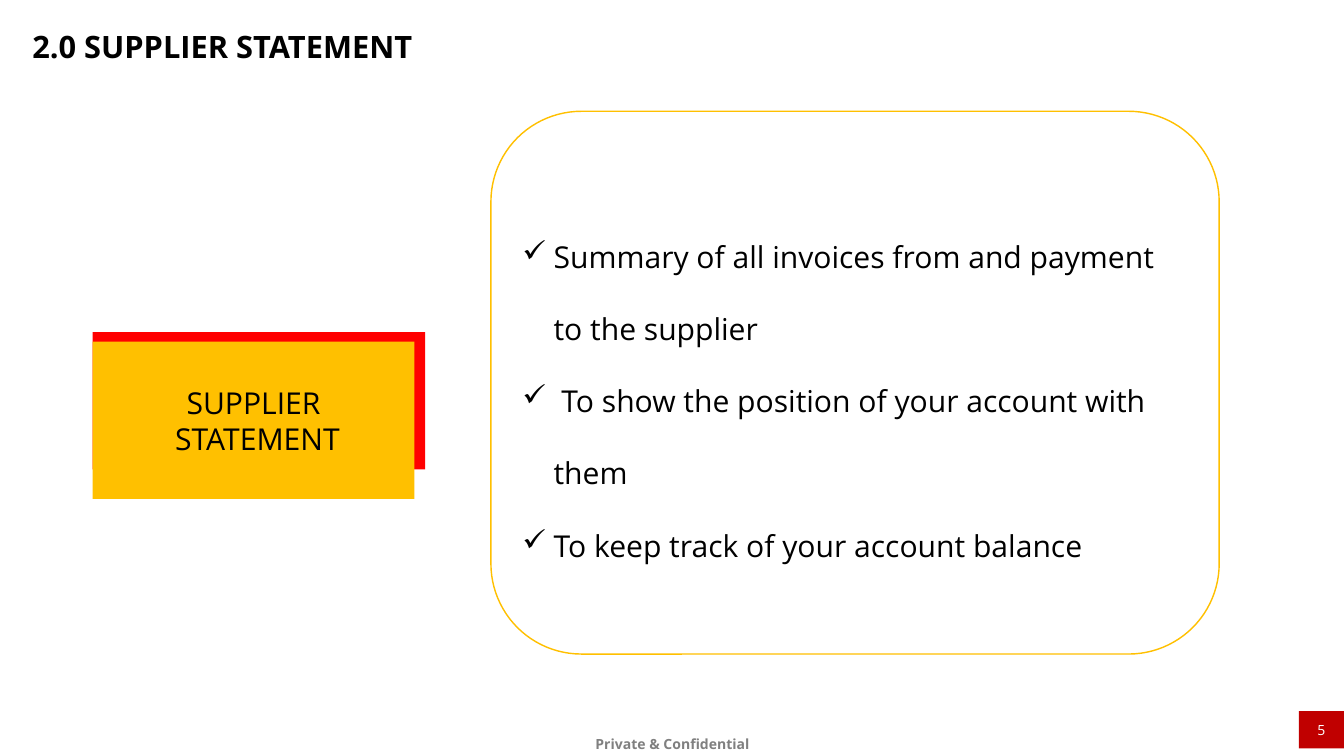
from dataclasses import dataclass

from lxml.etree import SubElement
from pptx import Presentation
from pptx.dml.color import RGBColor
from pptx.enum.shapes import MSO_SHAPE as Shape
from pptx.enum.text import MSO_ANCHOR as Anchor, MSO_AUTO_SIZE as AutoSize, PP_ALIGN as Align
from pptx.oxml.ns import qn
from pptx.util import Pt

FONT = "Open Sans"
BLACK, WHITE, GREY = "000000", "FFFFFF", "808080"
RED, DARK_RED, GOLD = "FF0000", "C00000", "FFC000"
BULLET_INDENT = Pt(44.64)


@dataclass
class Box:
    left: float
    top: float
    width: float
    height: float
    fill: str
    kind: Shape = Shape.RECTANGLE
    line: str | None = None


def color(target, value: str) -> None:
    target.rgb = RGBColor.from_string(value)


def draw_box(s, box: Box):
    sp = s.shapes.add_shape(box.kind, Pt(box.left), Pt(box.top), Pt(box.width), Pt(box.height))
    sp.shadow.inherit = False
    sp.fill.solid()
    color(sp.fill.fore_color, box.fill)
    if box.line:
        color(sp.line.color, box.line)
        sp.line.width = Pt(2)
    else:
        sp.line.fill.background()
    return sp


def add_check(p) -> None:
    pPr = p._p.get_or_add_pPr()
    pPr.set("marL", str(BULLET_INDENT))
    pPr.set("indent", str(-BULLET_INDENT))
    SubElement(pPr, qn("a:buChar")).set("char", "✓")


def write(sp, text: str, size: float, value: str = BLACK, bold: bool = False,
          align: Align = Align.CENTER, anchor: Anchor = Anchor.MIDDLE,
          checks: bool = False, wrap: bool = True) -> None:
    tf = sp.text_frame
    tf.text = text
    tf.word_wrap = wrap
    tf.auto_size = AutoSize.NONE
    tf.vertical_anchor = anchor
    for p in tf.paragraphs:
        p.alignment = align
        if checks:
            p.line_spacing = 2.0
            add_check(p)
        for r in p.runs:
            r.font.name = FONT
            r.font.size = Pt(size)
            r.font.bold = bold
            color(r.font.color, value)


def main() -> None:
    prs = Presentation()
    prs.slide_width, prs.slide_height = Pt(1920), Pt(1080)
    s = prs.slides.add_slide(prs.slide_layouts[5])

    title = s.shapes.title
    title.left, title.top, title.width, title.height = Pt(39), Pt(21.6), Pt(1658), Pt(90)
    write(title, "2.0 SUPPLIER STATEMENT", 44, bold=True, align=Align.LEFT)

    footer = s.shapes.add_textbox(Pt(830), Pt(1042), Pt(261.5), Pt(38))
    footer.text_frame.margin_top = Pt(8.64)
    write(footer, "Private & Confidential", 20, GREY, bold=True, anchor=Anchor.TOP, wrap=False)

    page = draw_box(s, Box(1855.4, 1016, 64.6, 53.3, DARK_RED))
    page.text_frame.margin_left = page.text_frame.margin_right = 0
    write(page, "5", 20, WHITE)

    draw_box(s, Box(132.5, 474.5, 475, 196, RED))
    label = draw_box(s, Box(132.5, 488, 459.4, 224.6, GOLD))
    write(label, "SUPPLIER\n STATEMENT", 43)

    panel = draw_box(s, Box(701.3, 159, 1040.4, 775.4, WHITE, Shape.ROUNDED_RECTANGLE, GOLD))
    points = [
        "Summary of all invoices from and payment to the supplier",
        " To show the position of your account with them",
        "To keep track of your account balance",
    ]
    write(panel, "\n".join(points), 43, align=Align.LEFT, checks=True)

    prs.save("out.pptx")


if __name__ == "__main__":
    main()
